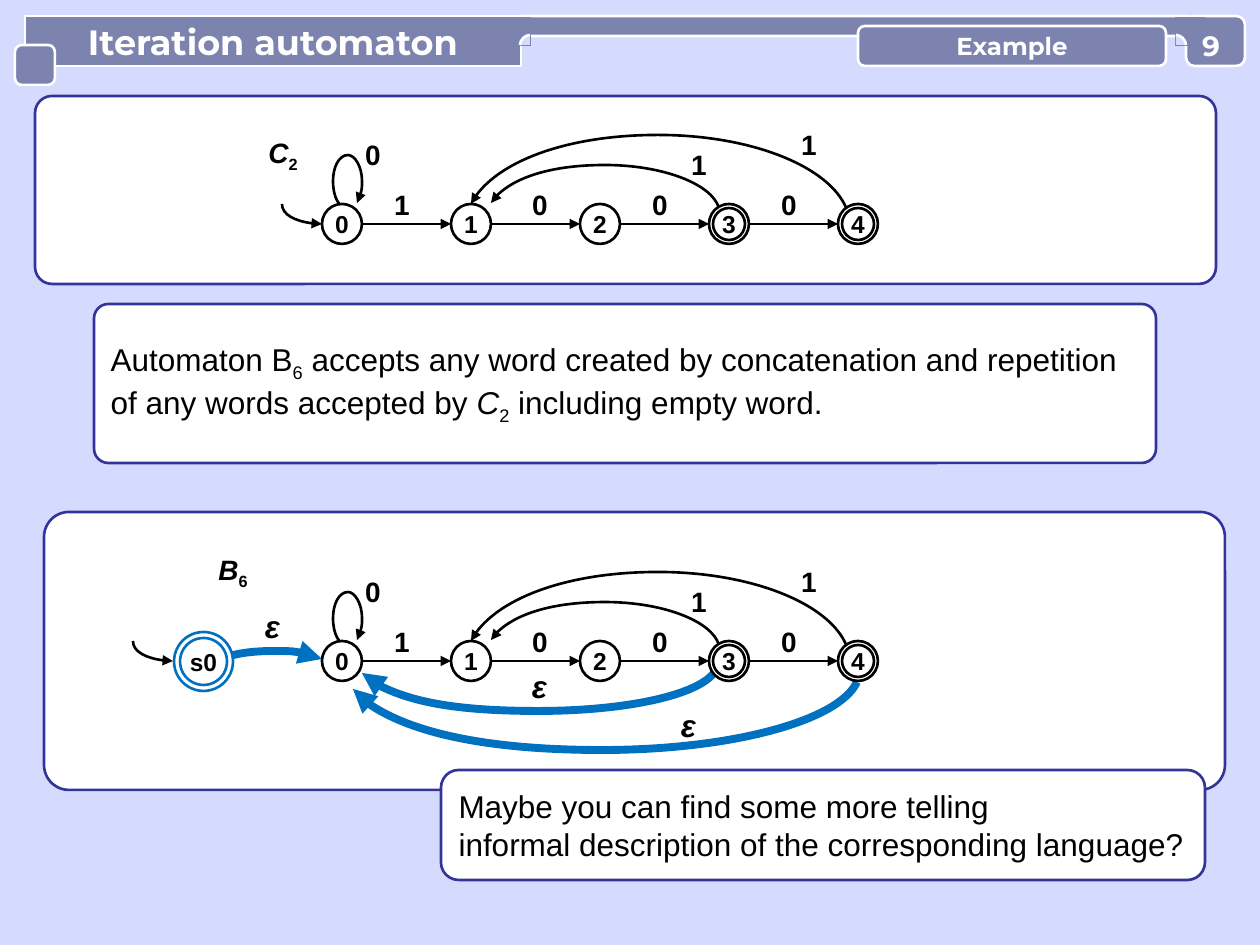
from dataclasses import dataclass
from itertools import pairwise

from lxml.etree import SubElement
from pptx import Presentation
from pptx.dml.color import RGBColor
from pptx.enum.shapes import MSO_CONNECTOR as Connector, MSO_SHAPE as Preset
from pptx.enum.text import MSO_ANCHOR as Anchor, MSO_AUTO_SIZE as AutoSize, PP_ALIGN as Align
from pptx.oxml.ns import qn
from pptx.util import Emu, Pt

EMU_PER_PX = 914400 / 126
BACKGROUND, HEADER, BORDER = "D5DAFF", "7D83AF", "333399"
WHITE, BLACK, BLUE = "FFFFFF", "000000", "0070C0"
AXIS, SECOND_ROW = 224, 437
Point = tuple[int, int]


@dataclass(frozen=True)
class Box:
    left: int
    top: int
    width: int
    height: int

    def emu(self) -> list[Emu]:
        return [px(n) for n in (self.left, self.top, self.width, self.height)]


@dataclass(frozen=True)
class Font:
    size: int
    color: str = BLACK
    name: str = "Arial"
    bold: bool = True


@dataclass(frozen=True)
class Run:
    text: str
    italic: bool = False
    subscript: bool = False


@dataclass(frozen=True)
class State:
    name: str
    x: int
    accepting: bool = False
    size: int = 40
    inset: int = 4
    color: str = BLACK


@dataclass(frozen=True)
class Label:
    text: str
    x: int
    y: int


STATE_FONT, LABEL_FONT = Font(14), Font(16)
BODY_FONT, EPSILON_FONT = Font(18, bold=False), Font(18)

STATES = [State(str(n), 342 + 129 * n, accepting=n > 2) for n in range(5)]
START_STATE = State("s0", 203, True, 59, 6, BLUE)
LABELS = [Label("0", 353, 135), Label("1", 382, 185), Label("0", 520, 185), Label("0", 640, 185),
          Label("0", 769, 185), Label("1", 679, 145), Label("1", 789, 125)]
EPSILONS = [Label("ε", 520, 661), Label("ε", 669, 700), Label("ε", 253, 601)]
ENTRY = [(282, 204), (282, 215), (301, 224), (322, 224)]
TRANSITIONS = [
    [(348, 209), (339, 208), (333, 197), (333, 181), (333, 167), (339, 155), (348, 155),
     (355, 155), (362, 167), (362, 181), (362, 190), (360, 198), (357, 203)],
    [(848, 213), (835, 169), (755, 135), (658, 135), (569, 135), (491, 164), (471, 204)],
    [(719, 208), (712, 184), (663, 165), (605, 165), (551, 165), (504, 181), (491, 203)],
]
EPSILON_MOVES = [
    [(717, 668), (706, 694), (629, 711), (538, 711), (454, 711), (382, 696), (362, 673)],
    [(857, 682), (839, 721), (731, 750), (602, 750), (483, 750), (379, 725), (353, 689)],
    [(223, 660), (227, 655), (248, 651), (273, 651), (296, 651), (318, 654), (322, 659)],
]


def px(n: float) -> Emu:
    return Emu(round(n * EMU_PER_PX))


def rgb(color: str) -> RGBColor:
    return RGBColor.from_string(color)


def paint(shape, fill: str | None, line: str | None, width: float = 1.5) -> None:
    if fill:
        shape.fill.solid()
        shape.fill.fore_color.rgb = rgb(fill)
    else:
        shape.fill.background()
    if line:
        shape.line.color.rgb = rgb(line)
        shape.line.width = Pt(width)
    else:
        shape.line.fill.background()


def write(shape, paragraphs: list[list[Run]], font: Font, align=Align.CENTER, wrap: bool = False) -> None:
    frame = shape.text_frame
    frame.word_wrap = wrap
    frame.auto_size = AutoSize.NONE
    frame.vertical_anchor = Anchor.MIDDLE
    for index, runs in enumerate(paragraphs):
        paragraph = frame.add_paragraph() if index else frame.paragraphs[0]
        paragraph.alignment = align
        paragraph.font.size, paragraph.font.name = Pt(font.size), font.name
        paragraph.font.bold, paragraph.font.color.rgb = font.bold, rgb(font.color)
        for part in runs:
            run = paragraph.add_run()
            run.text = part.text
            if part.italic:
                run.font.italic = True
            if part.subscript:
                run.font._element.set("baseline", "-25000")


def add_preset(slide, kind, box: Box, fill: str, line: str | None, adjust: float | None = None):
    shape = slide.shapes.add_shape(kind, *box.emu())
    shape.shadow.inherit = False
    paint(shape, fill, line)
    if adjust is not None:
        shape.adjustments[0] = adjust
    return shape


def add_label(slide, box: Box, runs: list[Run], font: Font) -> None:
    label = slide.shapes.add_textbox(*box.emu())
    frame = label.text_frame
    frame.margin_left = frame.margin_top = frame.margin_right = frame.margin_bottom = 0
    write(label, [runs], font, wrap=True)


def add_arrowhead(shape) -> None:
    SubElement(shape.line._get_or_add_ln(), qn("a:tailEnd"), type="triangle")


def add_line(slide, start: Point, end: Point, color: str):
    line = slide.shapes.add_connector(Connector.STRAIGHT, *map(px, start + end))
    line.line.color.rgb = rgb(color)
    line.line.width = Pt(1.5)
    SubElement(line._element.spPr, qn("a:effectLst"))
    return line


def add_curve(slide, points: list[Point], line: str | None, width: float = 1.5,
              fill: str | None = None, corner: Point | None = None):
    builder = slide.shapes.build_freeform(*points[0], scale=EMU_PER_PX)
    builder.add_line_segments(points[1:] + ([corner] if corner else []), close=False)
    curve = builder.convert_to_shape()
    curve.shadow.inherit = False
    paint(curve, fill, line, width)
    segments = list(curve._element.iter(qn("a:lnTo")))
    for first in range(0, len(points) - 1, 3):
        bezier = segments[first].makeelement(qn("a:cubicBezTo"))
        segments[first].addprevious(bezier)
        for segment in segments[first:first + 3]:
            bezier.append(segment[0])
            segment.getparent().remove(segment)
    return curve


def add_curved_arrow(slide, points: list[Point], color: str = BLACK, width: float = 1.5,
                     dx: int = 0, dy: int = 0) -> None:
    add_arrowhead(add_curve(slide, [(x + dx, y + dy) for x, y in points], color, width))


def add_state(slide, state: State, y: int) -> None:
    for inset in [0, state.inset] if state.accepting else [0]:
        size = state.size - 2 * inset
        box = Box(state.x - size // 2, y - size // 2, size, size)
        circle = add_preset(slide, Preset.OVAL, box, WHITE, state.color)
    write(circle, [[Run(state.name)]], STATE_FONT)


def add_automaton(slide, dy: int, name: list[Run], name_at: Point, entry_dx: int) -> None:
    add_curved_arrow(slide, ENTRY, dx=entry_dx, dy=dy)
    for points in TRANSITIONS:
        add_curved_arrow(slide, points, dy=dy)
    for source, target in pairwise(STATES):
        start, end = source.x + source.size // 2, target.x - target.size // 2
        add_arrowhead(add_line(slide, (start, AXIS + dy), (end, AXIS + dy), BLACK))
    for label in LABELS:
        add_label(slide, Box(label.x, label.y + dy, 40, 39), [Run(label.text)], LABEL_FONT)
    for state in STATES:
        add_state(slide, state, AXIS + dy)
    add_label(slide, Box(*name_at, 40, 40), name, LABEL_FONT)


def add_fillet(slide, foot: int, side: int) -> None:
    near, far = foot - 19 * side, foot + 11 * side
    add_preset(slide, Preset.RECTANGLE, Box(min(near, far), 16, 30, 30), HEADER, None)
    add_line(slide, (near, 16), (far, 16), WHITE)
    tip = foot + 10 * side
    arc = [(tip, 35), (foot + 5 * side, 35), (foot, 40), (foot, 45)]
    add_curve(slide, arc, None, fill=BACKGROUND, corner=(tip, 45))
    add_curve(slide, arc, WHITE)


def add_header(slide) -> None:
    title = slide.shapes.title
    title.left, title.top, title.width, title.height = Box(25, 16, 496, 50).emu()
    geometry = SubElement(title._element.spPr, qn("a:prstGeom"), prst="roundRect")
    SubElement(SubElement(geometry, qn("a:avLst")), qn("a:gd"), name="adj", fmla="val 18800")
    paint(title, HEADER, WHITE)
    write(title, [[Run("Iteration automaton")]], Font(20, WHITE, "Montserrat"))
    add_preset(slide, Preset.ROUNDED_RECTANGLE, Box(512, 16, 684, 20), HEADER, WHITE, 0.5)
    add_fillet(slide, 520, 1)
    for box in (Box(15, 45, 40, 40), Box(1186, 16, 59, 50)):
        add_preset(slide, Preset.ROUNDED_RECTANGLE, box, HEADER, WHITE, 0.17)
    add_fillet(slide, 1186, -1)
    example = add_preset(slide, Preset.ROUNDED_RECTANGLE, Box(858, 26, 308, 40), HEADER, WHITE, 0.17)
    write(example, [[Run("Example")]], Font(14, WHITE, "Montserrat"))
    add_label(slide, Box(1186, 28, 50, 34), [Run("9")], Font(16, WHITE, "Montserrat"))


def add_panel(slide, box: Box, adjust: float, paragraphs: list[list[Run]]) -> None:
    panel = add_preset(slide, Preset.ROUNDED_RECTANGLE, box, WHITE, BORDER, adjust)
    write(panel, paragraphs, BODY_FONT, Align.LEFT)


def main() -> None:
    deck = Presentation()
    deck.slide_width, deck.slide_height = px(1260), px(945)
    slide = deck.slides.add_slide(deck.slide_layouts[5])
    slide.background.fill.solid()
    slide.background.fill.fore_color.rgb = rgb(BACKGROUND)
    add_header(slide)
    add_panel(slide, Box(35, 96, 1181, 188), 0.09, [])
    add_panel(slide, Box(44, 512, 1181, 278), 0.09, [])
    add_panel(slide, Box(94, 304, 1062, 159), 0.09, [
        [Run("Automaton B"), Run("6", subscript=True),
         Run(" accepts any word created by concatenation and repetition")],
        [Run("of any words accepted by "), Run("C", italic=True), Run("2", subscript=True),
         Run(" including empty word.")]])
    add_automaton(slide, 0, [Run("C", italic=True), Run("2", subscript=True)], (263, 135), 0)
    for points in EPSILON_MOVES:
        add_curved_arrow(slide, points, BLUE, 4.5)
    add_automaton(slide, SECOND_ROW, [Run("B", italic=True), Run("6", subscript=True)], (213, 552), -149)
    add_state(slide, START_STATE, AXIS + SECOND_ROW)
    for label in EPSILONS:
        add_label(slide, Box(label.x, label.y, 39, 50), [Run(label.text, italic=True)], EPSILON_FONT)
    add_panel(slide, Box(441, 770, 764, 110), 0.16, [
        [Run("Maybe you can find some more telling")],
        [Run("informal description of the corresponding language?")]])
    deck.save("out.pptx")


if __name__ == "__main__":
    main()
